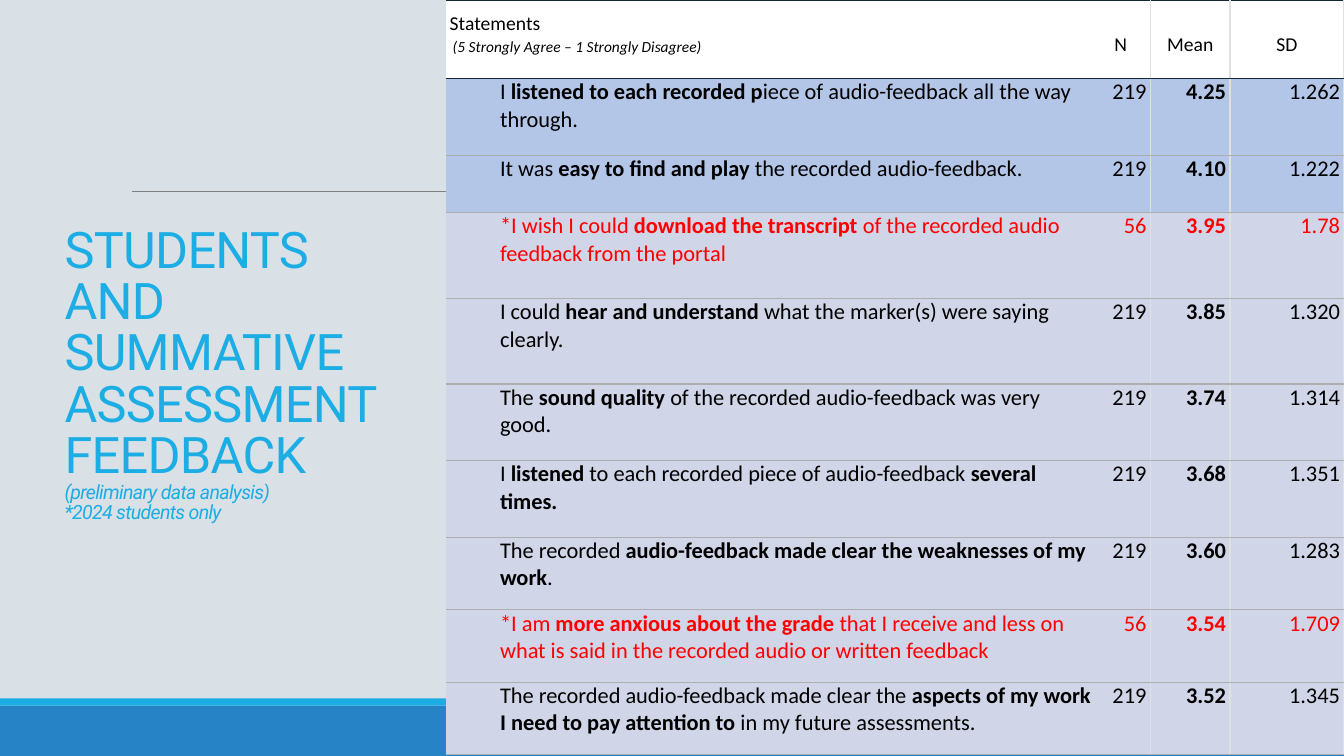
import pptx
import pptx.dml.color
import pptx.enum.shapes
import pptx.enum.text
import pptx.oxml
import pptx.oxml.ns
import pptx.util
from pptx.util import Inches

ALIGN = pptx.enum.text.PP_ALIGN
ANCHOR = pptx.enum.text.MSO_ANCHOR
NAMESPACE = pptx.oxml.ns.nsdecls("a")

COLUMN_WIDTHS = [6.4, 0.59, 0.79, 1.13]
ROW_HEIGHTS = [0.78, 0.76, 0.57, 0.85, 0.85, 0.76, 0.76, 0.72, 0.72, 0.72]
STATEMENT_INDENT = 0.54
NUMBER_MARGIN = 0.04
HIGHLIGHTED_ROWS = 2
DARK_LINE, ROW_LINE, COLUMN_LINE = "152935", "AEAEAE", "E0E0E0"

# Each statement alternates regular and bold pieces, divided by "|".
RESULTS = [
    ("I |listened to each recorded p|iece of audio-feedback all the way through.",
     "219", "4.25", "1.262"),
    ("It was |easy to find and play |the recorded audio-feedback.",
     "219", "4.10", "1.222"),
    ("*I wish I could |download the transcript |of the recorded audio feedback from the portal",
     "56", "3.95", "1.78"),
    ("I could |hear and understand |what the marker(s) were saying clearly.",
     "219", "3.85", "1.320"),
    ("The |sound quality |of the recorded audio-feedback was very good.",
     "219", "3.74", "1.314"),
    ("I |listened |to each recorded piece of audio-feedback |several times.",
     "219", "3.68", "1.351"),
    ("The recorded |audio-feedback made clear the weaknesses of my work|.",
     "219", "3.60", "1.283"),
    ("*I am |more anxious about the grade |that I receive and less on what is said "
     "in the recorded audio or written feedback",
     "56", "3.54", "1.709"),
    ("The recorded audio-feedback made clear the |aspects of my work I need to pay "
     "attention to |in my future assessments.",
     "219", "3.52", "1.345"),
]


def rgb(value):
    return pptx.dml.color.RGBColor.from_string(value)


def add_span(para, text, color, **formats):
    span = para.add_run()
    span.text = text
    span.font.color.rgb = rgb(color)
    for name, value in formats.items():
        setattr(span.font, name, value)
    return span


def add_band(slide, left, top, width, height, color):
    band = slide.shapes.add_shape(
        pptx.enum.shapes.MSO_SHAPE.RECTANGLE,
        Inches(left), Inches(top), Inches(width), Inches(height))
    band.shadow.inherit = False
    band.fill.solid()
    band.fill.fore_color.rgb = rgb(color)
    band.line.fill.background()


def add_backdrop(slide, width, height):
    slide.background.fill.solid()
    slide.background.fill.fore_color.rgb = rgb("D9E0E6")
    add_band(slide, 0, height - 0.5, width, 0.5, "2683C6")
    add_band(slide, 0, height - 0.57, width, 0.07, "1CADE4")
    rule = slide.shapes.add_connector(
        pptx.enum.shapes.MSO_CONNECTOR.STRAIGHT,
        Inches(1.31), Inches(1.9), Inches(12.21), Inches(1.9))
    rule.line.color.rgb = rgb("808080")
    rule.line.width = pptx.util.Pt(0.5)
    rule._element.spPr.append(pptx.oxml.parse_xml(f"<a:effectLst {NAMESPACE}/>"))


def fill_title(slide, left, top, width, height):
    title = slide.shapes.title
    title.left, title.top = Inches(left), Inches(top)
    title.width, title.height = Inches(width), Inches(height)
    frame = title.text_frame
    frame.word_wrap = True
    frame.auto_size = pptx.enum.text.MSO_AUTO_SIZE.NONE
    frame.vertical_anchor = ANCHOR.MIDDLE
    para = frame.paragraphs[0]
    para.alignment = ALIGN.LEFT
    para.line_spacing = 0.85
    lines = [
        ("STUDENTS AND SUMMATIVE ASSESSMENT FEEDBACK", 36, False),
        ("(preliminary data analysis)", 14, True),
        ("*2024 students only", 14, True),
    ]
    for index, (text, size, italic) in enumerate(lines):
        if index:
            para.add_line_break()
        span = add_span(para, text, "1CADE4", name="Roboto",
                        size=pptx.util.Pt(size), italic=italic)
        span._r.get_or_add_rPr().set("spc", "-50")


def style_cell(cell, fill, borders, **formats):
    """Borders map the sides L, R, T, B to a colour, or to None for no line."""
    properties = cell._tc.get_or_add_tcPr()
    for side, color in borders.items():
        paint = (f'<a:solidFill><a:srgbClr val="{color}"/></a:solidFill>'
                 if color else "<a:noFill/>")
        properties.append(pptx.oxml.parse_xml(
            f'<a:ln{side} {NAMESPACE} w="12700">{paint}</a:ln{side}>'))
    cell.fill.solid()
    cell.fill.fore_color.rgb = rgb(fill)
    for name, value in formats.items():
        setattr(cell, name, value)


def add_cell_span(para, text, size, color="000000", bold=False, italic=False):
    add_span(para, text, color, name="Calibri", size=pptx.util.Pt(size),
             bold=bold, italic=italic)


def fill_header(table):
    frame = table.cell(0, 0).text_frame
    lines = [("Statements", 14, False, 0.04),
             ("(5 Strongly Agree – 1 Strongly Disagree)", 11, True, 0.07)]
    for index, (text, size, italic, indent) in enumerate(lines):
        para = frame.add_paragraph() if index else frame.paragraphs[0]
        para.line_spacing = 1.07
        para._p.get_or_add_pPr().set("marL", str(Inches(indent)))
        add_cell_span(para, text, size, italic=italic)
    for column, text in enumerate(["N", "Mean", "SD"], start=1):
        para = table.cell(0, column).text_frame.paragraphs[0]
        para.alignment = ALIGN.CENTER
        para.line_spacing = pptx.util.Pt(16)
        add_cell_span(para, text, 14)


def fill_result(table, row, result):
    statement, *numbers = result
    color = "FF0000" if statement.startswith("*") else "000000"
    para = table.cell(row, 0).text_frame.paragraphs[0]
    for index, piece in enumerate(statement.split("|")):
        add_cell_span(para, piece, 16, color, bold=index % 2 == 1)
    for column, number in enumerate(numbers, start=1):
        para = table.cell(row, column).text_frame.paragraphs[0]
        para.alignment = ALIGN.RIGHT
        add_cell_span(para, number, 16, color, bold=column == 2)


def style_table(table):
    for row in range(len(ROW_HEIGHTS)):
        header = row == 0
        fill = "FFFFFF" if header else "B4C6E7" if row <= HIGHLIGHTED_ROWS else "D0D5E7"
        for column in range(len(COLUMN_WIDTHS)):
            first = column == 0
            indent = 0 if header else STATEMENT_INDENT
            borders = {
                "L": COLUMN_LINE if column > 1 else None,
                "R": None if first else COLUMN_LINE,
                "T": DARK_LINE if row <= 1 else ROW_LINE,
                "B": DARK_LINE if header else ROW_LINE,
            }
            style_cell(
                table.cell(row, column), fill, borders,
                margin_left=Inches(indent if first else NUMBER_MARGIN),
                margin_right=Inches(0 if first else NUMBER_MARGIN),
                margin_top=0,
                margin_bottom=Inches(0.22 if header else 0),
                vertical_anchor=ANCHOR.BOTTOM if header else ANCHOR.TOP)


def add_results_table(slide, left, top, width, height):
    table = slide.shapes.add_table(
        len(ROW_HEIGHTS), len(COLUMN_WIDTHS),
        Inches(left), Inches(top), Inches(width), Inches(height)).table
    table.first_row = table.horz_banding = False
    for column, column_width in zip(table.columns, COLUMN_WIDTHS):
        column.width = Inches(column_width)
    for row, row_height in zip(table.rows, ROW_HEIGHTS):
        row.height = Inches(row_height)
    style_table(table)
    fill_header(table)
    for row, result in enumerate(RESULTS, start=1):
        fill_result(table, row, result)


def main():
    deck = pptx.Presentation()
    deck.slide_width, deck.slide_height = Inches(13.33), Inches(7.5)
    slide = deck.slides.add_slide(deck.slide_layouts[5])
    add_backdrop(slide, 13.33, 7.5)
    fill_title(slide, 0.54, 0.57, 3.37, 6.31)
    add_results_table(slide, 4.42, 0, 8.91, 7.5)
    deck.save("out.pptx")


if __name__ == "__main__":
    main()
